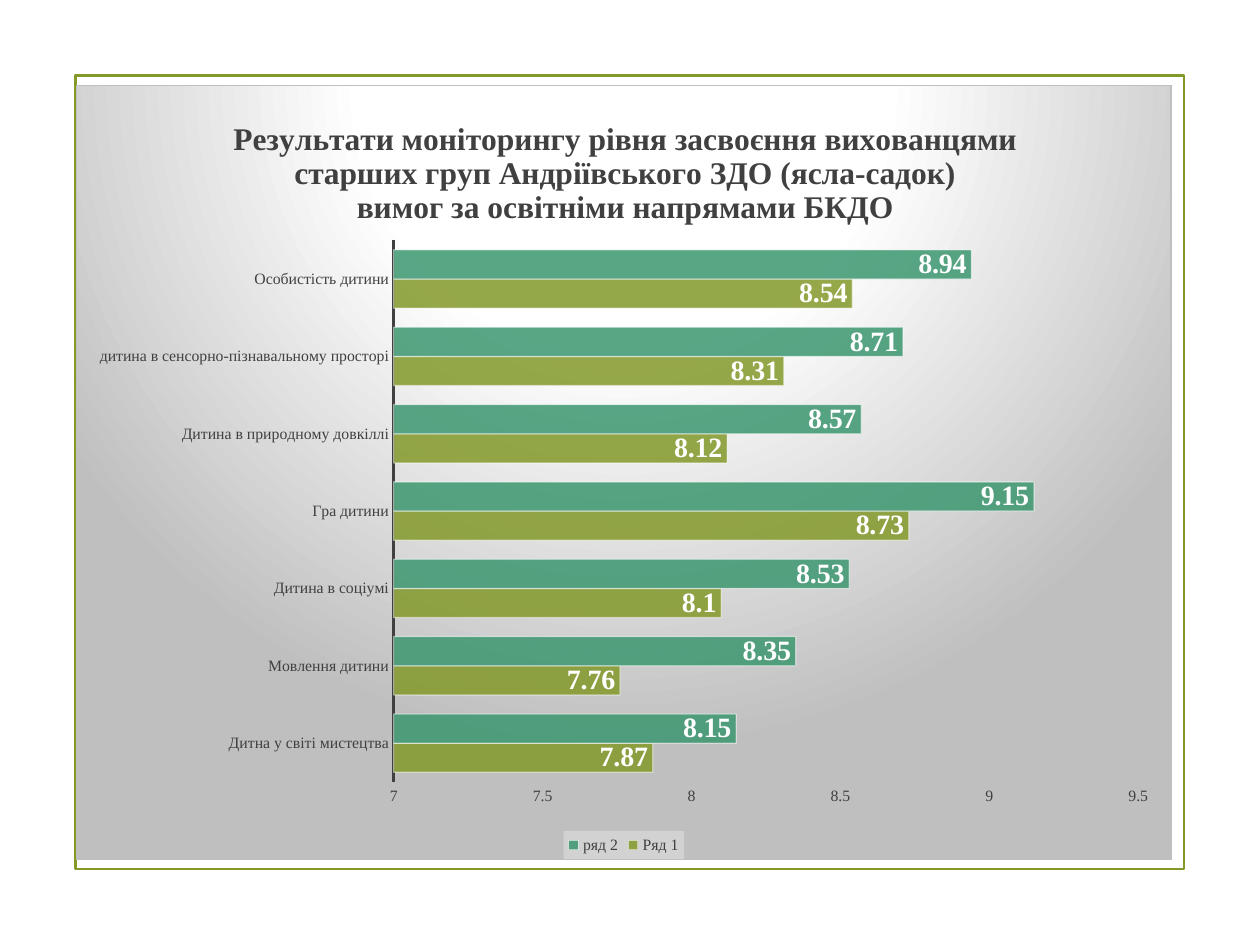
import lxml.etree
import pptx
import pptx.chart.data
import pptx.dml.color
import pptx.enum.chart
import pptx.enum.shapes
import pptx.oxml
import pptx.oxml.ns
import pptx.util

FONT = "Times New Roman"
GREEN, TEAL = "83992A", "3C9770"
DARK, GRAY, PALE, WHITE = "404040", "BFBFBF", "F2F2F2", "FFFFFF"
NAMESPACES = pptx.oxml.ns.nsdecls("a", "c")

TITLE = (
    "Результати моніторингу рівня засвоєння вихованцями "
    "старших груп Андріївського ЗДО (ясла-садок)",
    "вимог за освітніми напрямами БКДО",
)
CATEGORIES = (
    "Дитна у світі мистецтва",
    "Мовлення дитини",
    "Дитина в соціумі",
    "Гра дитини",
    "Дитина в природному довкіллі",
    "дитина в сенсорно-пізнавальному просторі",
    "Особистість дитини",
)
SERIES = (
    ("Ряд 1", GREEN, (7.87, 7.76, 8.1, 8.73, 8.12, 8.31, 8.54)),
    ("ряд 2", TEAL, (8.15, 8.35, 8.53, 9.15, 8.57, 8.71, 8.94)),
)
CHART_BACKGROUND = f"""<c:spPr {NAMESPACES}>
  <a:gradFill><a:gsLst>
    <a:gs pos="0"><a:srgbClr val="{WHITE}"/></a:gs>
    <a:gs pos="39000"><a:srgbClr val="{WHITE}"/></a:gs>
    <a:gs pos="100000"><a:srgbClr val="{GRAY}"/></a:gs>
  </a:gsLst><a:path path="circle">
    <a:fillToRect l="50000" t="-80000" r="50000" b="180000"/>
  </a:path></a:gradFill>
  <a:ln w="9525"><a:solidFill><a:srgbClr val="{GRAY}"/></a:solidFill></a:ln>
</c:spPr>"""
LEGEND_BACKGROUND = f"""<c:spPr {NAMESPACES}><a:solidFill>
  <a:srgbClr val="{PALE}"><a:alpha val="39000"/></a:srgbClr>
</a:solidFill></c:spPr>"""


def color(hex_text):
    return pptx.dml.color.RGBColor.from_string(hex_text)


def style_font(font, size, hex_text=DARK, bold=False):
    font.name, font.size, font.bold = FONT, pptx.util.Pt(size), bold
    font.color.rgb = color(hex_text)


def fill_solid(fill, hex_text, opacity):
    """Fill with a colour whose opacity is a percentage."""
    fill.solid()
    fill.fore_color.rgb = color(hex_text)
    for element in fill._xPr.iterfind(".//" + pptx.oxml.ns.qn("a:solidFill")):
        if element.getparent() is fill._xPr:
            alpha = lxml.etree.SubElement(element[0], pptx.oxml.ns.qn("a:alpha"))
            alpha.set("val", str(opacity * 1000))


def set_background(element, xml):
    """Place shape properties just before the text properties."""
    text_properties = element.find(pptx.oxml.ns.qn("c:txPr"))
    text_properties.addprevious(pptx.oxml.parse_xml(xml))


def set_layout(element, target="", **shares):
    """Place a chart part by shares (x, y, w, h) of the chart's size."""
    old_layout = element.find(pptx.oxml.ns.qn("c:layout"))
    if old_layout is not None:
        element.remove(old_layout)
    modes = "".join(f'<c:{key}Mode val="edge"/>' for key in "xy")
    sizes = "".join(f'<c:{key} val="{share}"/>' for key, share in shares.items())
    layout = pptx.oxml.parse_xml(
        f"<c:layout {NAMESPACES}><c:manualLayout>{target}{modes}{sizes}"
        "</c:manualLayout></c:layout>"
    )
    text = element.find(pptx.oxml.ns.qn("c:tx"))
    element.insert(0 if text is None else 1, layout)


class SlideBuilder:
    """Holds the current slide; places are shares of its size."""

    def __init__(self, presentation):
        self.width = presentation.slide_width
        self.height = presentation.slide_height
        self.slide = presentation.slides.add_slide(presentation.slide_layouts[6])

    def place(self, left, top, width, height):
        return (
            round(left * self.width), round(top * self.height),
            round(width * self.width), round(height * self.height),
        )

    def add_frame(self, *shares):
        shape = self.slide.shapes.add_shape(
            pptx.enum.shapes.MSO_SHAPE.RECTANGLE, *self.place(*shares)
        )
        shape.shadow.inherit = False
        shape.fill.background()
        shape.line.color.rgb = color(GREEN)
        shape.line.width = pptx.util.Pt(1.25)

    def add_bar_chart(self, *shares):
        data = pptx.chart.data.CategoryChartData()
        data.categories = CATEGORIES
        for name, _, values in SERIES:
            data.add_series(name, values)
        chart = self.slide.shapes.add_chart(
            pptx.enum.chart.XL_CHART_TYPE.BAR_CLUSTERED, *self.place(*shares), data
        ).chart
        style_font(chart.font, 10, "000000")
        set_background(chart._chartSpace, CHART_BACKGROUND)
        self.style_title(chart)
        self.style_axes(chart)
        self.style_bars(chart.plots[0])
        self.style_legend(chart)
        set_layout(
            chart._chartSpace.chart.plotArea, '<c:layoutTarget val="inner"/>',
            x=0.29, y=0.2, w=0.68, h=0.7,
        )

    def style_title(self, chart):
        chart.has_title = True
        frame = chart.chart_title.text_frame
        frame.text = "\n".join(TITLE)
        for paragraph in frame.paragraphs:
            style_font(paragraph.font, 18, bold=True)
            style_font(paragraph.runs[0].font, 18, bold=True)
        chart.chart_title.include_in_layout = False
        set_layout(chart.chart_title._element, x=0.14, y=0.04)

    def style_axes(self, chart):
        for axis in (chart.category_axis, chart.value_axis):
            axis.major_tick_mark = pptx.enum.chart.XL_TICK_MARK.NONE
            axis.minor_tick_mark = pptx.enum.chart.XL_TICK_MARK.NONE
            axis.has_major_gridlines = False
            style_font(axis.tick_labels.font, 9)
        chart.category_axis.format.line.color.rgb = color(DARK)
        chart.category_axis.format.line.width = pptx.util.Pt(1.5)
        value_axis = chart.value_axis
        value_axis.format.line.fill.background()
        value_axis.minimum_scale, value_axis.maximum_scale = 7, 9.5
        value_axis.major_unit = 0.5

    def style_bars(self, plot):
        plot.gap_width, plot.overlap = 65, 0
        plot.vary_by_categories = False
        for series, (_, hex_text, _) in zip(plot.series, SERIES):
            fill_solid(series.format.fill, hex_text, 85)
            fill_solid(series.format.line.fill, WHITE, 50)
            series.format.line.width = pptx.util.Pt(0.75)
            labels = series.data_labels
            labels.show_value = True
            labels.position = pptx.enum.chart.XL_LABEL_POSITION.INSIDE_END
            style_font(labels.font, 16, WHITE, bold=True)

    def style_legend(self, chart):
        chart.has_legend = True
        chart.legend.position = pptx.enum.chart.XL_LEGEND_POSITION.BOTTOM
        chart.legend.include_in_layout = False
        style_font(chart.legend.font, 9)
        set_background(chart.legend._element, LEGEND_BACKGROUND)


def main():
    presentation = pptx.Presentation()
    presentation.slide_width = pptx.util.Inches(10)
    presentation.slide_height = pptx.util.Inches(7.5)
    builder = SlideBuilder(presentation)
    builder.add_frame(0.06, 0.08, 0.88, 0.84)
    builder.add_bar_chart(0.06, 0.09, 0.87, 0.82)
    presentation.save("out.pptx")


if __name__ == "__main__":
    main()
